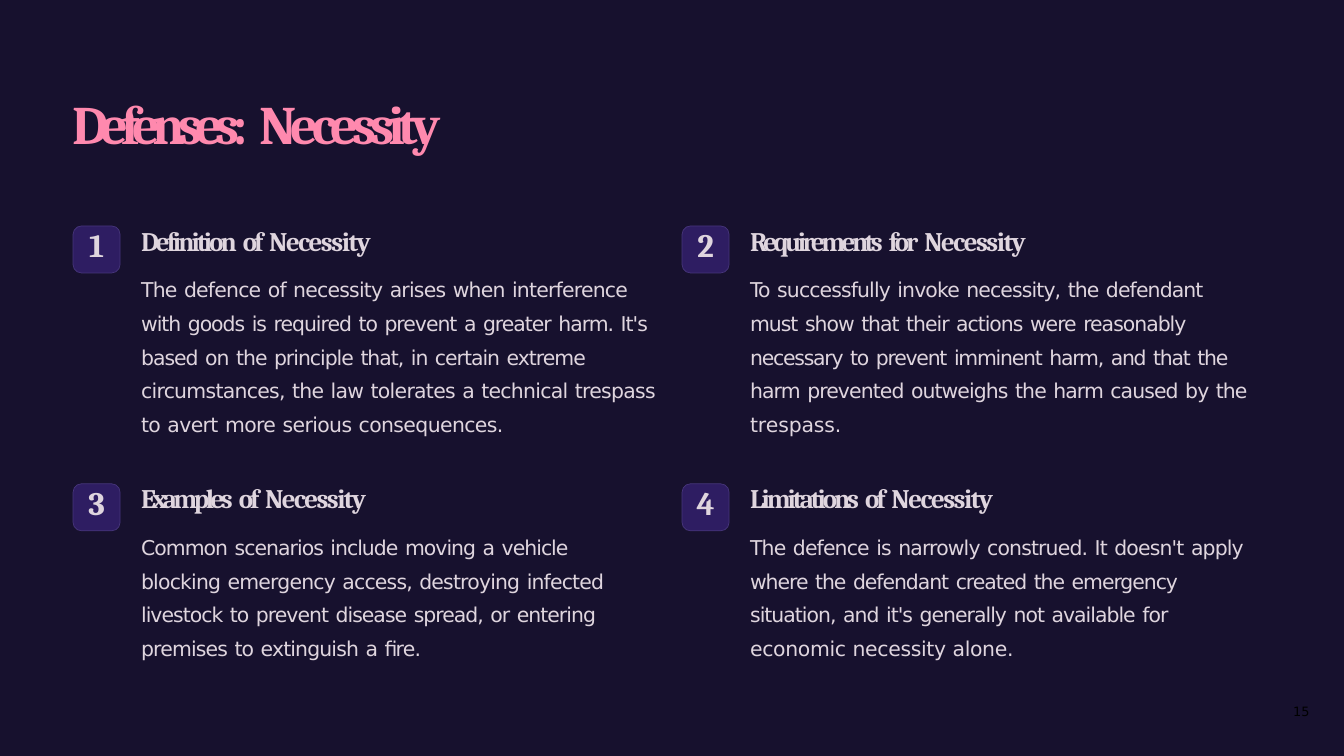
from pptx import Presentation
from pptx import util as u
from pptx.dml.color import RGBColor
from pptx.enum import shapes, text

TITLE = [("Defenses:", -6.2), ("Necessity", -5.2)]

# Text width, heading and body; each run is a (words, letter spacing in points) pair.
POINTS = [
    (6.16, [("Definition", -2.5), ("of", -2.4), ("Necessity", -1.3)],
     [("The defence of necessity arises when interference", -0.68),
      ("with goods is required to prevent a greater harm. It's", -0.89),
      ("based on the principle that, in certain extreme", -0.89),
      ("circumstances, the law tolerates a technical trespass", -0.63),
      ("to avert more serious consequences.", -0.55)]),
    (5.95, [("Requirements", -3), ("for", -2.6), ("Necessity", -1.3)],
     [("To successfully invoke necessity, the defendant", -0.76),
      ("must show that their actions were reasonably", -0.88),
      ("necessary to prevent imminent harm, and that the", -1.07),
      ("harm prevented outweighs the harm caused by the", -0.79),
      ("trespass.", -0.1)]),
    (5.95, [("Examples", -3), ("of", -2.4), ("Necessity", -1.4)],
     [("Common scenarios include moving a vehicle", -0.86),
      ("blocking emergency access, destroying infected", -0.7),
      ("livestock to prevent disease spread, or entering", -0.85),
      ("premises to extinguish a fire.", -0.74)]),
    (5.95, [("Limitations", -2.6), ("of", -2.4), ("Necessity", -1.3)],
     [("The defence is narrowly construed. It doesn't apply", -0.75),
      ("where the defendant created the emergency", -0.92),
      ("situation, and it's generally not available for", -0.85),
      ("economic necessity alone.", -0.32)]),
]


def color(value):
    return RGBColor.from_string(value)


def spaced_words(runs):
    """Split runs into words, with untightened spaces between them."""
    pieces = []
    for words, spacing in runs:
        for word in words.split():
            if pieces:
                pieces.append((" ", 0))
            pieces.append((word, spacing))
    return pieces


def write(paragraph, runs, size, font, ink, bold=False, before=0, line=None,
          align=text.PP_ALIGN.LEFT):
    paragraph.alignment = align
    paragraph.space_before = u.Pt(before)
    if line:
        paragraph.line_spacing = line
    for piece, spacing in spaced_words(runs):
        run = paragraph.add_run()
        run.text = piece
        run.font.size = u.Pt(size)
        run.font.name = font
        run.font.bold = bold
        run.font.color.rgb = color(ink)
        run._r.get_or_add_rPr().set("spc", str(round(spacing * 100)))


class Deck:
    SERIF, SANS = "Cambria", "DejaVu Sans"
    NIGHT, PINK, PALE = "17112E", "FF89AE", "DFD5DE"
    BADGE, BADGE_EDGE, BLACK = "2E1D62", "47367B", "000000"
    BADGE_SIZE = 0.56

    def __init__(self, slide):
        self.slide = slide

    def panel(self, kind, left, top, width, height, fill, edge=None):
        panel = self.slide.shapes.add_shape(
            kind, u.Inches(left), u.Inches(top), u.Inches(width), u.Inches(height))
        panel.shadow.inherit = False
        panel.fill.solid()
        panel.fill.fore_color.rgb = color(fill)
        if edge:
            panel.line.color.rgb = color(edge)
            panel.line.width = u.Pt(0.6)
        else:
            panel.line.fill.background()
        return panel

    def backdrop(self):
        self.panel(shapes.MSO_SHAPE.RECTANGLE, 0, 0, 16, 9, self.NIGHT)

    def frame(self, left, top, width, height):
        """Add a text box without side margins and return its text frame."""
        box = self.slide.shapes.add_textbox(
            u.Inches(left), u.Inches(top), u.Inches(width), u.Inches(height))
        frame = box.text_frame
        frame.word_wrap = True
        frame.margin_left = frame.margin_right = frame.margin_bottom = 0
        frame.margin_top = u.Inches(0.01)
        return frame

    def title(self, runs):
        frame = self.frame(0.86, 0.72, 13.7, 1.53)
        frame.margin_top = u.Inches(0.35)
        write(frame.paragraphs[0], runs, 46.5, self.SERIF, self.PINK, bold=True, before=1.1)

    def badge(self, left, top, number):
        size = self.BADGE_SIZE
        badge = self.panel(shapes.MSO_SHAPE.ROUNDED_RECTANGLE, left, top, size, size,
                           self.BADGE, self.BADGE_EDGE)
        badge.adjustments[0] = 0.18
        frame = self.frame(left, top - 0.02, size, 0.49)
        write(frame.paragraphs[0], [(str(number), 0)], 28, self.SERIF, self.PALE,
              bold=True, before=0.9, align=text.PP_ALIGN.CENTER)

    def point(self, left, top, number, width, heading, body):
        self.badge(left, top, number)
        frame = self.frame(left + 0.81, top - 0.03, width, 2.56)
        write(frame.paragraphs[0], heading, 23, self.SERIF, self.PALE, bold=True, before=1.1)
        write(frame.add_paragraph(), body, 17.5, self.SANS, self.PALE, before=9.8, line=1.38)

    def page_number(self, number):
        frame = self.frame(14.59, 8.37, 1, 0.22)
        write(frame.paragraphs[0], [(str(number), 0)], 11, self.SANS, self.BLACK,
              align=text.PP_ALIGN.RIGHT)


def main():
    presentation = Presentation()
    presentation.slide_width = u.Inches(16)
    presentation.slide_height = u.Inches(9)
    deck = Deck(presentation.slides.add_slide(presentation.slide_layouts[6]))
    deck.backdrop()
    deck.title(TITLE)
    for index, (width, heading, body) in enumerate(POINTS):
        row, column = divmod(index, 2)
        deck.point(0.87 + 7.25 * column, 2.69 + 3.07 * row, index + 1, width, heading, body)
    deck.page_number(15)
    presentation.save("out.pptx")


if __name__ == "__main__":
    main()
